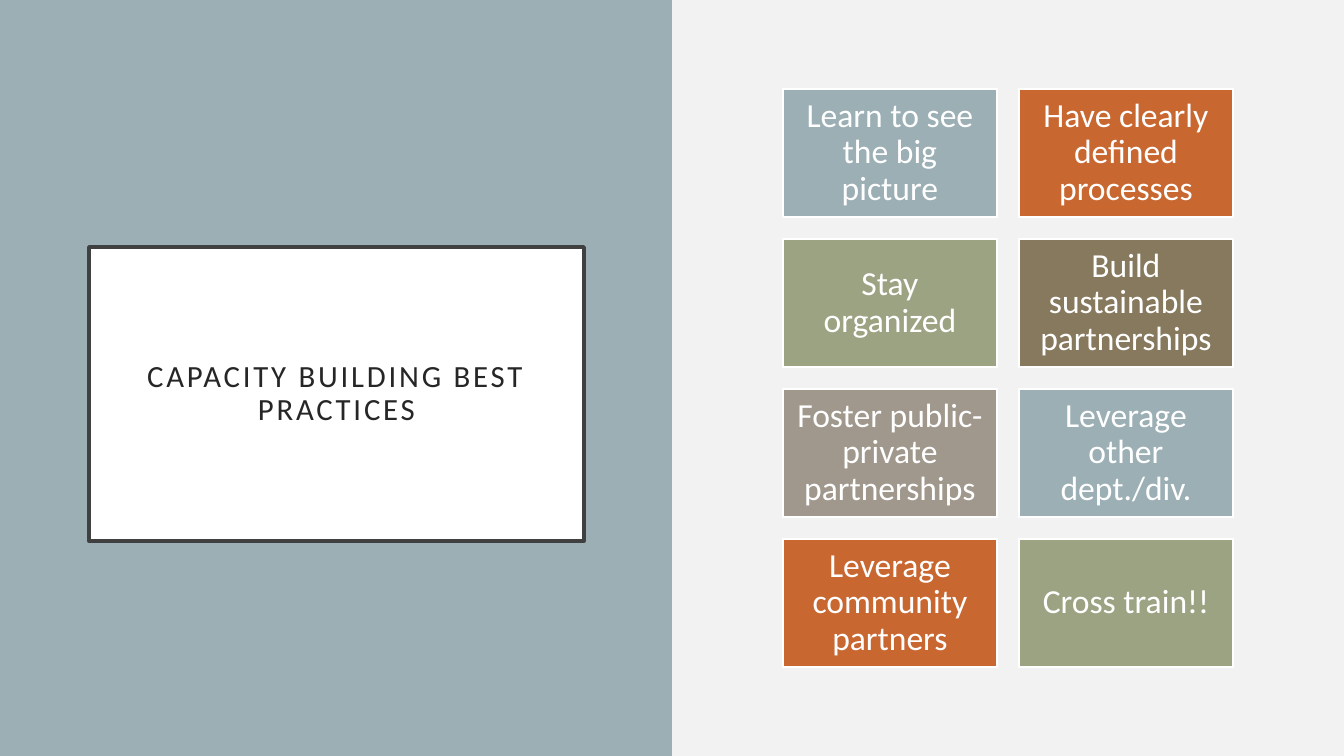
import pptx
import pptx.dml.color
import pptx.enum.shapes
import pptx.enum.text
import pptx.util
from dataclasses import dataclass

SCALE = 12192000 / 1344  # EMU in one px


@dataclass(frozen=True)
class Theme:
    font: str = "Calibri"
    back: str = "F2F2F2"
    white: str = "FFFFFF"
    ink: str = "262626"
    frame: str = "404040"
    blue: str = "9BAFB5"
    rust: str = "C96731"
    green: str = "9CA383"
    brown: str = "87795D"
    taupe: str = "A0988C"
    head: int = 22
    body: int = 24


THEME = Theme()

TILES = [
    ("Learn to see the big picture", THEME.blue),
    ("Have clearly defined processes", THEME.rust),
    ("Stay organized", THEME.green),
    ("Build sustainable partnerships", THEME.brown),
    ("Foster public-private partnerships", THEME.taupe),
    ("Leverage other dept./div.", THEME.blue),
    ("Leverage community partners", THEME.rust),
    ("Cross train!!", THEME.green),
]
COLS = 2
LEFT, TOP = 783, 89
WIDE, HIGH = 214, 128
GAP = 22


def px(count):
    return pptx.util.Emu(round(count * SCALE))


def rgb(code):
    return pptx.dml.color.RGBColor.from_string(code)


def paint(shape, fill, line=None, width=1):
    shape.fill.solid()
    shape.fill.fore_color.rgb = rgb(fill)
    if line:
        shape.line.color.rgb = rgb(line)
        shape.line.width = pptx.util.Pt(width)
    else:
        shape.line.fill.background()


def write(shape, text, size, color, inset):
    """Put centred text in a shape and return its font."""
    frame = shape.text_frame
    frame.text = text
    frame.word_wrap = True
    frame.auto_size = pptx.enum.text.MSO_AUTO_SIZE.NONE
    frame.vertical_anchor = pptx.enum.text.MSO_ANCHOR.MIDDLE
    frame.margin_left = frame.margin_right = px(inset)
    frame.margin_top = frame.margin_bottom = px(inset)
    para = frame.paragraphs[0]
    para.alignment = pptx.enum.text.PP_ALIGN.CENTER
    para.line_spacing = 0.9
    font = para.font
    font.name = THEME.font
    font.size = pptx.util.Pt(size)
    font.color.rgb = rgb(color)
    return font


def add_box(slide, left, top, width, height, fill, line=None):
    box = slide.shapes.add_shape(
        pptx.enum.shapes.MSO_SHAPE.RECTANGLE,
        px(left), px(top), px(width), px(height))
    box.shadow.inherit = False
    paint(box, fill, line)
    return box


def add_panel(slide):
    panel = add_box(slide, 0, 0, 672, 756, THEME.blue)
    # Send the panel behind the title
    slide.shapes.title._element.addprevious(panel._element)


def set_title(slide, text):
    title = slide.shapes.title
    title.left, title.top = px(89), px(247)
    title.width, title.height = px(495), px(294)
    paint(title, THEME.white, THEME.frame, 2.5)
    font = write(title, text, THEME.head, THEME.ink, 20)
    font._element.set("spc", "200")  # letter spacing, 2 pt


def add_tiles(slide):
    for index, (text, fill) in enumerate(TILES):
        row, col = divmod(index, COLS)
        tile = add_box(slide, LEFT + col * (WIDE + GAP),
                       TOP + row * (HIGH + GAP),
                       WIDE, HIGH, fill, THEME.white)
        write(tile, text, THEME.body, THEME.white, 10)


def main():
    deck = pptx.Presentation()
    deck.slide_width, deck.slide_height = px(1344), px(756)
    slide = deck.slides.add_slide(deck.slide_layouts[5])

    # Background and left half
    slide.background.fill.solid()
    slide.background.fill.fore_color.rgb = rgb(THEME.back)
    add_panel(slide)

    # Title card and grid of practices
    set_title(slide, "CAPACITY BUILDING BEST PRACTICES")
    add_tiles(slide)

    deck.save("out.pptx")


if __name__ == "__main__":
    main()
